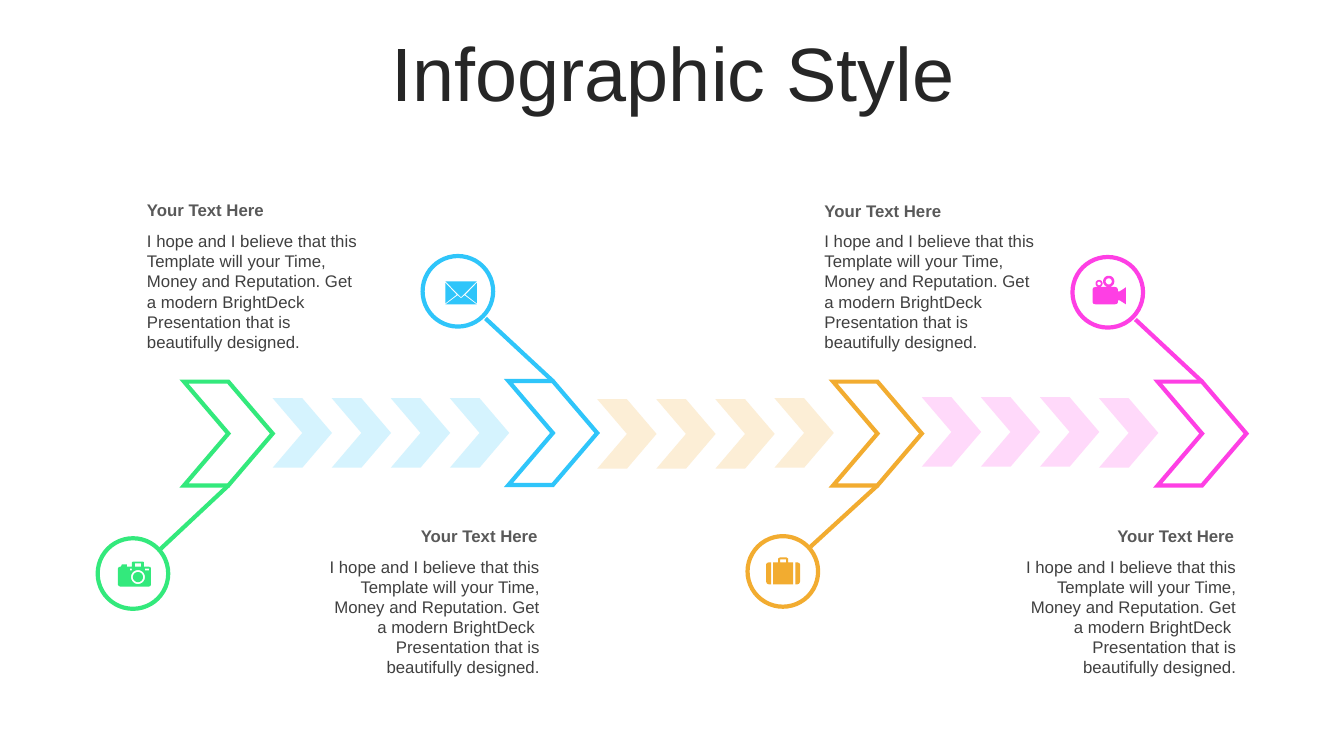
from math import cos, pi, sin

from lxml import etree
from pptx import Presentation
from pptx.dml.color import RGBColor
from pptx.enum.shapes import MSO_CONNECTOR, MSO_SHAPE
from pptx.enum.text import MSO_ANCHOR, PP_ALIGN
from pptx.oxml.ns import qn
from pptx.util import Pt

CHEVRON, OVAL = MSO_SHAPE.CHEVRON, MSO_SHAPE.OVAL
STRAIGHT = MSO_CONNECTOR.STRAIGHT
MIDDLE = MSO_ANCHOR.MIDDLE
LEFT, CENTER, RIGHT = PP_ALIGN.LEFT, PP_ALIGN.CENTER, PP_ALIGN.RIGHT

WHITE = RGBColor(0xFF, 0xFF, 0xFF)
GREEN = RGBColor(0x33, 0xE9, 0x7C)
BLUE = RGBColor(0x2F, 0xC5, 0xFA)
ORANGE = RGBColor(0xF2, 0xAC, 0x30)
PINK = RGBColor(0xFE, 0x3F, 0xE4)
PALE_BLUE = RGBColor(0xD5, 0xF3, 0xFE)
PALE_ORANGE = RGBColor(0xFC, 0xEE, 0xD6)
PALE_PINK = RGBColor(0xFF, 0xD9, 0xFA)
TITLE_GRAY = RGBColor(0x26, 0x26, 0x26)
HEADING_GRAY = RGBColor(0x59, 0x59, 0x59)
BODY_GRAY = RGBColor(0x40, 0x40, 0x40)

HEADING = "Your Text Here"
BODY = ("I hope and I believe that this Template will your Time, Money and Reputation. "
        "Get a modern BrightDeck  Presentation that is beautifully designed.")

STATION_PITCH = 231.84
CHEVRON_LEFT, CHEVRON_WIDTH, CHEVRON_HEIGHT = 131.4, 63.36, 74.2
SMALL_WIDTH, SMALL_HEIGHT, SMALL_PITCH = 42.4, 49.7, 42.2
CIRCLE_LEFT, CIRCLE_SIZE, CIRCLE_PITCH = 69.8, 50.4, 232.1


def circle(x, y, radius):
    """Return the corner points of a 36-sided round outline."""
    return [(x + radius * cos(step * pi / 18), y + radius * sin(step * pi / 18))
            for step in range(36)]


def add_preset(kind, left, top, width, height, fill, line=None):
    shape = slide.shapes.add_shape(kind, Pt(left), Pt(top), Pt(width), Pt(height))
    shape.shadow.inherit = False
    shape.fill.solid()
    shape.fill.fore_color.rgb = fill
    if line is None:
        shape.line.fill.background()
    else:
        shape.line.color.rgb = line
        shape.line.width = Pt(3)
        outline = shape._element.spPr.find(qn("a:ln"))
        etree.SubElement(outline, qn("a:miter"), lim="800000")


# Icon outlines, in points from the centre of the circle; inner outlines are holes.
CAMERA = [
    [(-10.8, -3.6), (-10, -4.7), (-8.6, -5), (-7.9, -6.5), (-4.3, -6.5), (-4.3, -5),
     (-0.7, -5), (-0.7, -8), (0, -8.6), (7.2, -8.6), (7.9, -8), (7.9, -5), (10.8, -5),
     (12.4, -4.7), (12.9, -3.6), (12.9, 7.9), (12.4, 9), (10.8, 9.4), (-8.6, 9.4),
     (-10, 9), (-10.8, 7.9)],
    [(1.4, -7.3), (5.8, -7.3), (5.8, -5), (1.4, -5)],
    [(-2.2, -3.6), (-0.7, -3.6), (-0.7, -2.2), (-2.2, -2.2)],
    [(8.6, -3.6), (11.5, -3.6), (11.5, -2.2), (8.6, -2.2)],
    circle(3.6, 2.5, 5), circle(3.6, 2.5, 3.6),
]
ENVELOPE = [
    [(4.8, 2.9), (13.5, 9.4), (-8.9, 9.4), (-0.2, 2.9), (2.3, 5)],
    [(13.5, -6), (13.5, 8.6), (5.5, 2.4)],
    [(-8.9, -6), (-0.9, 2.4), (-8.9, 8.6)],
    [(-8.9, -7.1), (13.5, -7.1), (2.3, 4.2)],
]
SUITCASE = [
    [(8.9, -6.5), (10.3, -6.5), (11.7, -6), (12.3, -5), (12.3, 7.2), (11.7, 8.7),
     (10.3, 9.3), (8.9, 9.3)],
    [(-8.4, -6.5), (-9.9, -6.5), (-11.4, -6), (-12, -5), (-12, 7.2), (-11.4, 8.7),
     (-9.9, 9.3), (-8.4, 9.3)],
    [(-7, -6.5), (-3.4, -6.5), (-3.4, -9.2), (-1.9, -10.1), (2.4, -10.1), (3.8, -9.2),
     (3.8, -6.5), (7.4, -6.5), (7.4, 9.3), (-7, 9.3)],
    [(-1.9, -6.5), (-1.9, -8.6), (2.4, -8.6), (2.4, -6.5)],
]
CAMCORDER = [
    [(-10.8, -2.2), (-10.2, -3.4), (-8.6, -3.8), (5, -3.8), (6.6, -3.4), (7.2, -2.2),
     (7.2, -0.7), (8.6, -0.7), (13, -3.6), (13, 8.6), (8.6, 5.8), (7.2, 5.8),
     (7.2, 7.2), (6.6, 8.2), (5, 8.6), (-8.6, 8.6), (-10.2, 8.2), (-10.8, 7.2)],
    circle(-6.2, -6.3, 2.5), circle(-6.2, -6.3, 1.3),
    circle(0.7, -7.8, 4), circle(0.7, -7.8, 2.2),
]

# colour, icon, circle below, chevron top, circle top, text left, heading top, body top
STATIONS = [
    (GREEN, CAMERA, True, 272.6, 384.5, 97.9, 139, 161.3),
    (BLUE, ENVELOPE, False, 272.2, 182.9, 223.4, 372.2, 393.8),
    (ORANGE, SUITCASE, True, 272.6, 383, 581.8, 139.7, 161.3),
    (PINK, CAMCORDER, False, 272.6, 183.6, 720.9, 372.2, 393.8),
]
SMALL_ROWS = [(PALE_BLUE, 284.4), (PALE_ORANGE, 285.1), (PALE_PINK, 283.7)]
LAST_SMALL_TOP = 284.4

presentation = Presentation()
presentation.slide_width, presentation.slide_height = Pt(960), Pt(540)
slide = presentation.slides.add_slide(presentation.slide_layouts[5])

title = slide.shapes.title
title.left, title.top, title.width, title.height = Pt(25.2), Pt(26.6), Pt(911.5), Pt(56.9)
title.text_frame.text = "Infographic Style"
title.text_frame.vertical_anchor = MIDDLE
paragraph = title.text_frame.paragraphs[0]
paragraph.alignment = CENTER
paragraph.line_spacing = 0.9
paragraph.space_before = Pt(10)
paragraph.font.name = "Arial"
paragraph.font.size = Pt(54)
paragraph.font.color.rgb = TITLE_GRAY

for row, (color, row_top) in enumerate(SMALL_ROWS):
    row_left = CHEVRON_LEFT + CHEVRON_WIDTH + row * STATION_PITCH
    for column in range(4):
        top = LAST_SMALL_TOP if column == 3 else row_top
        add_preset(CHEVRON, row_left + column * SMALL_PITCH, top,
                   SMALL_WIDTH, SMALL_HEIGHT, color)

for index, station in enumerate(STATIONS):
    color, icon, below, chevron_top, circle_top, text_left, heading_top, body_top = station
    chevron_left = CHEVRON_LEFT + index * STATION_PITCH
    circle_left = CIRCLE_LEFT + index * CIRCLE_PITCH
    add_preset(CHEVRON, chevron_left, chevron_top, CHEVRON_WIDTH, CHEVRON_HEIGHT, WHITE, color)

    line_start = circle_top + (7.6 if below else 44.6)
    line_end = chevron_top + (CHEVRON_HEIGHT if below else 0)
    connector = slide.shapes.add_connector(
        STRAIGHT, Pt(circle_left + 44.9), Pt(line_start),
        Pt(chevron_left + CHEVRON_WIDTH / 2), Pt(line_end))
    connector.line.color.rgb = color
    connector.line.width = Pt(3)
    etree.SubElement(connector._element.spPr, qn("a:effectLst"))

    add_preset(OVAL, circle_left, circle_top, CIRCLE_SIZE, CIRCLE_SIZE, WHITE, color)

    center_x, center_y = circle_left + CIRCLE_SIZE / 2, circle_top + CIRCLE_SIZE / 2
    outlines = [[(Pt(center_x + x), Pt(center_y + y)) for x, y in outline] for outline in icon]
    builder = slide.shapes.build_freeform(*outlines[0][0])
    for outline in outlines:
        if outline is not outlines[0]:
            builder.move_to(*outline[0])
        builder.add_line_segments(outline[1:], close=True)
    shape = builder.convert_to_shape()
    shape.shadow.inherit = False
    shape.fill.solid()
    shape.fill.fore_color.rgb = color
    shape.line.fill.background()

    for text, top, width, height, text_color, bold in (
            (BODY, body_top, 169.2, 94.3, BODY_GRAY, False),
            (HEADING, heading_top, 167.8, 21.6, HEADING_GRAY, True)):
        box = slide.shapes.add_textbox(Pt(text_left), Pt(top), Pt(width), Pt(height))
        box.text_frame.word_wrap = True
        box.text_frame.text = text
        paragraph = box.text_frame.paragraphs[0]
        paragraph.alignment = LEFT if below else RIGHT
        paragraph.font.name = "Arial"
        paragraph.font.size = Pt(12)
        paragraph.font.bold = bold
        paragraph.font.color.rgb = text_color

presentation.save("out.pptx")
